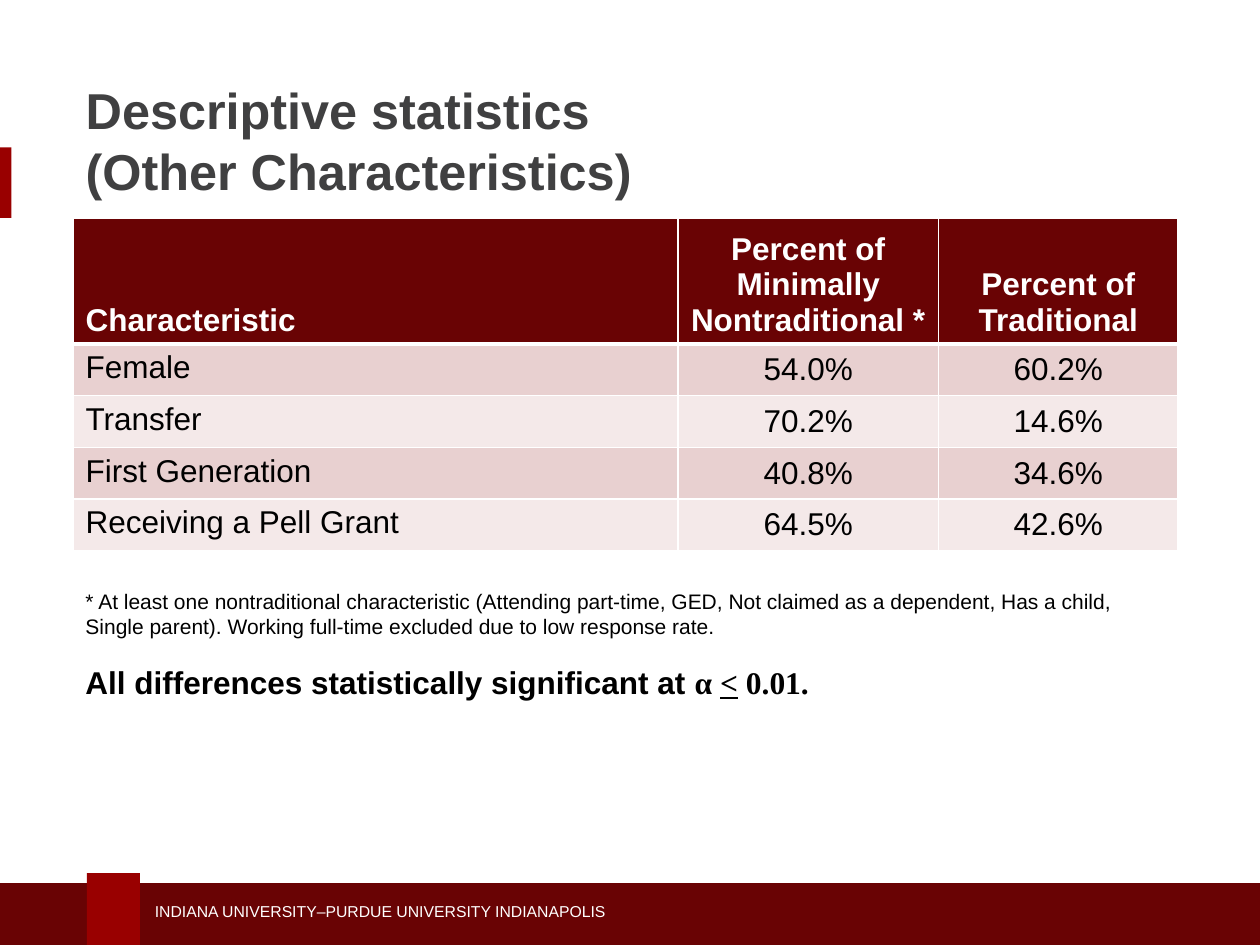
from lxml import etree
from pptx import Presentation
from pptx import util as u
from pptx.dml.color import RGBColor
from pptx.enum import shapes, text
from pptx.oxml.ns import qn

DARK = RGBColor(0x69, 0x03, 0x04)
RED = RGBColor(0x99, 0x00, 0x00)
GRAY = RGBColor(0x40, 0x40, 0x41)
ROSE = RGBColor(0xE8, 0xD0, 0xD0)
PALE = RGBColor(0xF4, 0xE9, 0xE9)
WHITE = RGBColor(0xFF, 0xFF, 0xFF)
BLACK = RGBColor(0x00, 0x00, 0x00)

COLS = (4.8, 2.07, 1.9)
HEAD, ROW = 0.93, 0.41
ROWS = (
    ("Characteristic", "Percent of Minimally Nontraditional *", "Percent of Traditional"),
    ("Female", "54.0%", "60.2%"),
    ("Transfer", "70.2%", "14.6%"),
    ("First Generation", "40.8%", "34.6%"),
    ("Receiving a Pell Grant", "64.5%", "42.6%"),
)
NOTE = (
    "* At least one nontraditional characteristic (Attending part-time, GED, "
    "Not claimed as a dependent, Has a child, Single parent). "
    "Working full-time excluded due to low response rate."
)


def style(font, size, color, bold=False, name="Arial"):
    font.name, font.size, font.bold = name, u.Pt(size), bold
    font.color.rgb = color


def add_block(slide, x, y, w, h, color):
    block = slide.shapes.add_shape(
        shapes.MSO_SHAPE.RECTANGLE, *map(u.Inches, (x, y, w, h)))
    block.shadow.inherit = False
    block.fill.solid()
    block.fill.fore_color.rgb = color
    block.line.fill.background()


def add_text(slide, x, y, w, h):
    frame = slide.shapes.add_textbox(*map(u.Inches, (x, y, w, h))).text_frame
    frame.word_wrap = True
    return frame


def add_footer(slide, x, y, w, h):
    add_block(slide, x, y, w, h, DARK)
    add_block(slide, x + 0.69, y - 0.08, 0.42, h + 0.08, RED)
    frame = add_text(slide, x + 1.13, y + 0.1, 3.95, 0.25)
    frame.vertical_anchor = text.MSO_ANCHOR.MIDDLE
    frame.text = "INDIANA UNIVERSITY–PURDUE UNIVERSITY INDIANAPOLIS"
    style(frame.paragraphs[0].runs[0].font, 9, WHITE)


def add_title(slide, x, y, w, h):
    title = slide.shapes.title
    title.left, title.top, title.width, title.height = map(u.Inches, (x, y, w, h))
    frame = title.text_frame
    frame.auto_size = text.MSO_AUTO_SIZE.NONE
    frame.vertical_anchor = text.MSO_ANCHOR.MIDDLE
    frame.text = "Descriptive statistics\v(Other Characteristics)"
    para = frame.paragraphs[0]
    para.alignment = text.PP_ALIGN.LEFT
    for run in para.runs:
        style(run.font, 28.8, GRAY, True)


def set_edges(cell, top, bottom):
    props = cell._tc.get_or_add_tcPr()
    for side, width in (("L", 1), ("R", 1), ("T", top), ("B", bottom)):
        line = etree.SubElement(props, qn(f"a:ln{side}"), w=str(u.Pt(width)))
        fill = etree.SubElement(line, qn("a:solidFill"))
        etree.SubElement(fill, qn("a:srgbClr"), val=str(WHITE))


def fill_cell(cell, words, row, col):
    set_edges(cell, 3 if row == 1 else 1, 3 if row == 0 else 1)
    cell.fill.solid()
    cell.fill.fore_color.rgb = DARK if row == 0 else (PALE, ROSE)[row % 2]
    cell.text = words
    if row == 0:
        cell.vertical_anchor = text.MSO_ANCHOR.BOTTOM
    elif col:
        cell.vertical_anchor = text.MSO_ANCHOR.MIDDLE
    para = cell.text_frame.paragraphs[0]
    para.alignment = text.PP_ALIGN.CENTER if col else text.PP_ALIGN.LEFT
    style(para.runs[0].font, 18, BLACK if row else WHITE, row == 0)


def add_stats(slide, x, y):
    size = sum(COLS), HEAD + ROW * (len(ROWS) - 1)
    table = slide.shapes.add_table(
        len(ROWS), len(COLS), *map(u.Inches, (x, y, *size))).table
    for col, width in enumerate(COLS):
        table.columns[col].width = u.Inches(width)
    for row, items in enumerate(ROWS):
        table.rows[row].height = u.Inches(ROW if row else HEAD)
        for col, words in enumerate(items):
            fill_cell(table.cell(row, col), words, row, col)


def add_notes(slide, x, y, w, h):
    frame = add_text(slide, x, y, w, h)
    frame.text = NOTE
    style(frame.paragraphs[0].runs[0].font, 12, BLACK)
    para = frame.add_paragraph()
    para.space_before = u.Pt(14)
    serif = "Times New Roman"
    for words, name, under in (
        ("All differences statistically significant at ", "Arial", False),
        ("α ", serif, False),
        ("<", serif, True),
        (" 0.01.", serif, False),
    ):
        run = para.add_run()
        run.text = words
        style(run.font, 18, BLACK, True, name)
        run.font.underline = under


def main():
    deck = Presentation()
    deck.slide_width, deck.slide_height = u.Inches(10), u.Inches(7.5)
    slide = deck.slides.add_slide(deck.slide_layouts[5])
    add_block(slide, 0, 1.17, 0.09, 0.56, RED)
    add_footer(slide, 0, 7.01, 10, 0.49)
    add_title(slide, 0.58, 0.76, 8.75, 0.7)
    add_stats(slide, 0.58, 1.73)
    add_notes(slide, 0.58, 4.62, 8.38, 1.01)
    deck.save("out.pptx")


if __name__ == "__main__":
    main()
